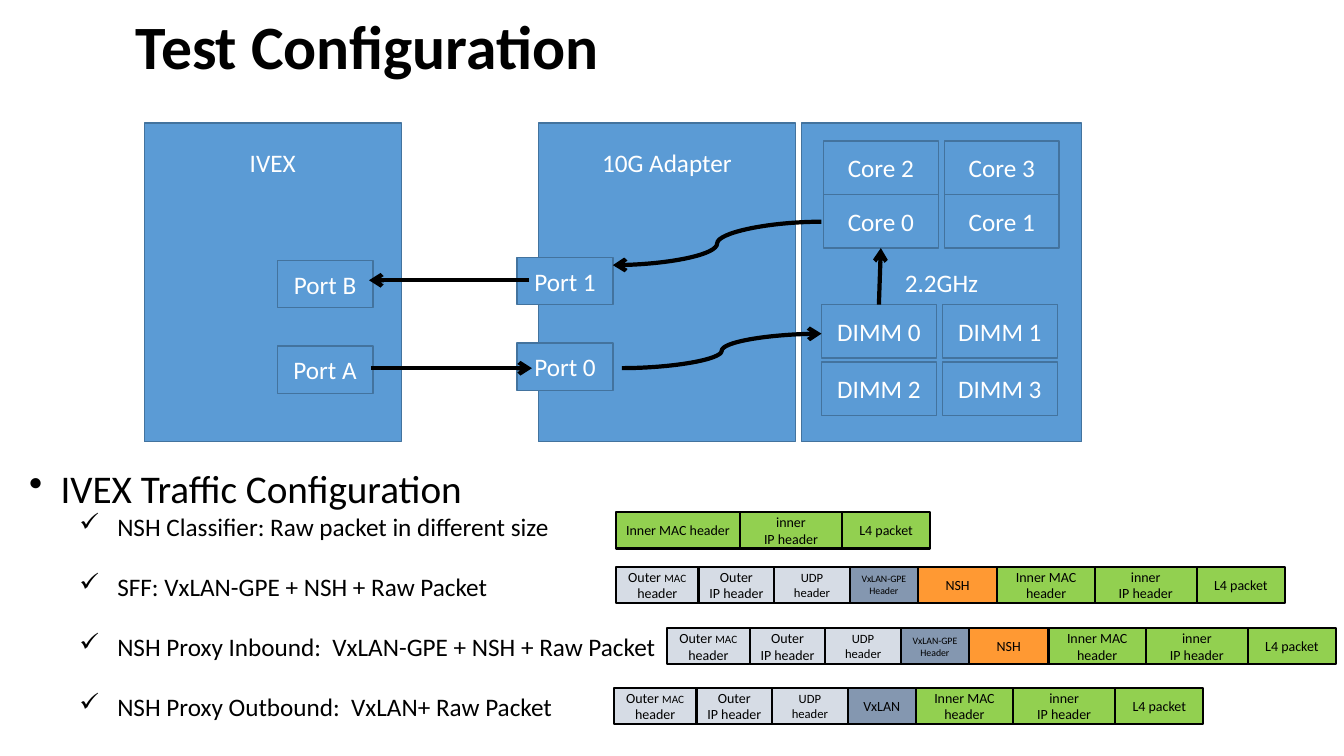
from lxml import etree
from pptx import Presentation
from pptx.dml.color import RGBColor
from pptx.enum.shapes import MSO_CONNECTOR, MSO_SHAPE
from pptx.enum.text import MSO_ANCHOR, PP_ALIGN
from pptx.oxml.ns import qn
from pptx.util import Pt

RECTANGLE = MSO_SHAPE.RECTANGLE
STRAIGHT, CURVE = MSO_CONNECTOR.STRAIGHT, MSO_CONNECTOR.CURVE
TOP, MIDDLE = MSO_ANCHOR.TOP, MSO_ANCHOR.MIDDLE
CENTER, LEFT = PP_ALIGN.CENTER, PP_ALIGN.LEFT
TOP_SITE, BOTTOM_SITE = 0, 2

FONT = "Calibri"
COLORS = {
    "ink": "000000",
    "white": "FFFFFF",
    "device": "5B9BD5",
    "device_edge": "43739E",
    "inner": "92D050",
    "outer": "D6DCE5",
    "tunnel": "8497B0",
    "nsh": "FF9933",
}

FIELDS = {
    "inner mac wide": (88.6, "inner", [[("Inner MAC header", 10)]]),
    "inner mac": (69.6, "inner", [[("Inner MAC header", 10)]]),
    "inner ip": (72.8, "inner", [[("inner", 10)], [("IP header", 10)]]),
    "l4": (63, "inner", [[("L4 packet", 10)]]),
    "outer mac": (59, "outer", [[("Outer ", 10), ("MAC", 8)], [("header", 10)]]),
    "outer ip": (54, "outer", [[("Outer", 10)], [("IP header", 10)]]),
    "udp": (54, "outer", [[("UDP header", 9)]]),
    "gpe": (48.6, "tunnel", [[("VxLAN-GPE", 7)], [("Header", 7)]]),
    "vxlan": (48.6, "tunnel", [[("VxLAN", 10)]]),
    "nsh": (56.8, "nsh", [[("NSH", 10)]]),
}
OUTER = ["outer mac", "outer ip", "udp"]
INNER = ["inner mac", "inner ip", "l4"]
PACKETS = [
    (440, 365.8, ["inner mac wide", "inner ip", "l4"]),
    (440, 404.8, OUTER + ["gpe", "nsh"] + INNER),
    (476.5, 448.6, OUTER + ["gpe", "nsh"] + INNER),
    (438.5, 491.2, OUTER + ["vxlan"] + INNER),
]
TRAFFIC = [
    "NSH Classifier: Raw packet in different size",
    "SFF: VxLAN-GPE + NSH + Raw Packet",
    "NSH Proxy Inbound:  VxLAN-GPE + NSH + Raw Packet",
    "NSH Proxy Outbound:  VxLAN+ Raw Packet",
]


def rgb(name):
    return RGBColor.from_string(COLORS[name])


def apply_format(target, values):
    for attribute, value in values.items():
        setattr(target, attribute, value)


def add_run(paragraph, text, size, color="ink", bold=False):
    run = paragraph.add_run()
    run.text = text
    apply_format(run.font, {"name": FONT, "size": Pt(size), "bold": bold})
    run.font.color.rgb = rgb(color)


def write_lines(frame, lines, color, align):
    for index, line in enumerate(lines):
        paragraph = frame.add_paragraph() if index else frame.paragraphs[0]
        paragraph.alignment = align
        for text, size in line:
            add_run(paragraph, text, size, color)


def add_box(shapes, box, fill, edge, weight, lines, color, **frame_format):
    block = shapes.add_shape(RECTANGLE, *map(Pt, box))
    block.shadow.inherit = False
    block.fill.solid()
    block.fill.fore_color.rgb = rgb(fill)
    block.line.color.rgb = rgb(edge)
    block.line.width = Pt(weight)
    defaults = {"word_wrap": True, "vertical_anchor": MIDDLE}
    apply_format(block.text_frame, defaults | frame_format)
    write_lines(block.text_frame, lines, color, CENTER)
    return block


def add_device(slide, box, label, **frame_format):
    return add_box(slide.shapes, box, "device", "device_edge", 1,
                   [[(label, 18)]], "white", **frame_format)


def add_arrow(slide, kind, start, end):
    arrow = slide.shapes.add_connector(kind, *map(Pt, (*start, *end)))
    arrow.line.color.rgb = rgb("ink")
    arrow.line.width = Pt(3)
    properties = arrow._element.spPr
    etree.SubElement(properties.get_or_add_ln(), qn("a:tailEnd"), type="arrow")
    etree.SubElement(properties, qn("a:effectLst"))
    return arrow


def add_title(slide, box):
    heading = slide.shapes.add_textbox(*map(Pt, box)).text_frame
    apply_format(heading, {"word_wrap": True, "vertical_anchor": MIDDLE})
    heading.paragraphs[0].line_spacing = 0.9
    add_run(heading.paragraphs[0], "Test Configuration", 44, bold=True)


def add_machine(slide, box, label, port_left, port_top, ports):
    left, top = box[:2]
    add_device(slide, box, label, vertical_anchor=TOP, margin_top=Pt(17))
    for row, port in enumerate(ports):
        port_box = (left + port_left, top + port_top + row * 61.2, 68.4, 33.8)
        add_device(slide, port_box, port)


def add_unit_grid(slide, left, top, row_pitch, labels):
    return {
        label: add_device(
            slide,
            (left + index % 2 * 86.4, top + index // 2 * row_pitch, 82, 38.2),
            label)
        for index, label in enumerate(labels)
    }


def add_processor(slide, box):
    left, top = box[:2]
    add_device(slide, box, "2.2GHz")
    cores = add_unit_grid(slide, left + 15.8, top + 12.8, 38.2,
                          ["Core 2", "Core 3", "Core 0", "Core 1"])
    dimms = add_unit_grid(slide, left + 14.4, top + 129.6, 41,
                          ["DIMM 0", "DIMM 1", "DIMM 2", "DIMM 3"])
    load = add_arrow(slide, STRAIGHT, (left, top), (left, top))
    load.begin_connect(dimms["DIMM 0"], TOP_SITE)
    load.end_connect(cores["Core 0"], BOTTOM_SITE)


def add_testbed(slide, box):
    left, top, width, height = box
    add_machine(slide, (left, top, 183.6, height), "IVEX",
                95, 98, ["Port B", "Port A"])
    add_machine(slide, (left + 281.6, top, 183.6, height), "10G Adapter",
                -15.2, 95.8, ["Port 1", "Port 0"])
    add_processor(slide, (left + width - 200.2, top, 200.2, height))
    flows = [
        (STRAIGHT, (275, 112.2), (160.6, 112.2)),
        (STRAIGHT, (162, 175), (277, 175)),
        (CURVE, (341.2, 175), (483.8, 150.4)),
        (CURVE, (483.8, 70.4), (334.8, 101.4)),
    ]
    for kind, start, end in flows:
        add_arrow(slide, kind, (left + start[0], top + start[1]),
                  (left + end[0], top + end[1]))


def set_bullet(paragraph, mark, margin, hanging):
    properties = paragraph._p.get_or_add_pPr()
    properties.set("marL", str(Pt(margin)))
    properties.set("indent", str(-Pt(hanging)))
    etree.SubElement(properties, qn("a:buChar"), char=mark)


def add_traffic_list(slide, box):
    frame = slide.shapes.add_textbox(*map(Pt, box)).text_frame
    frame.word_wrap = True
    write_lines(frame, [[("IVEX Traffic Configuration", 28)]]
                + [[(item, 18)] for item in TRAFFIC], "ink", LEFT)
    heading, *items = frame.paragraphs
    set_bullet(heading, "•", 22.5, 22.5)
    for index, item in enumerate(items):
        item.level = 1
        item.space_before = Pt(21.2 if index else 0)
        set_bullet(item, "✓", 63, 27)


def add_packet(slide, left, top, field_names):
    packet = slide.shapes.add_group_shape()
    for name in field_names:
        width, fill, lines = FIELDS[name]
        add_box(packet.shapes, (left, top, width, 26), fill, "ink", 1.5,
                lines, "ink", margin_left=Pt(6), margin_right=Pt(6),
                margin_top=0, margin_bottom=0)
        left += width


def main():
    deck = Presentation()
    deck.slide_width, deck.slide_height = Pt(960), Pt(540)
    slide = deck.slides.add_slide(deck.slide_layouts[6])
    add_title(slide, (90, 5.8, 489, 59))
    add_testbed(slide, (103, 88, 669.6, 227.6))
    add_traffic_list(slide, (13.7, 328.4, 684.8, 211))
    for left, top, field_names in PACKETS:
        add_packet(slide, left, top, field_names)
    deck.save("out.pptx")


if __name__ == "__main__":
    main()
